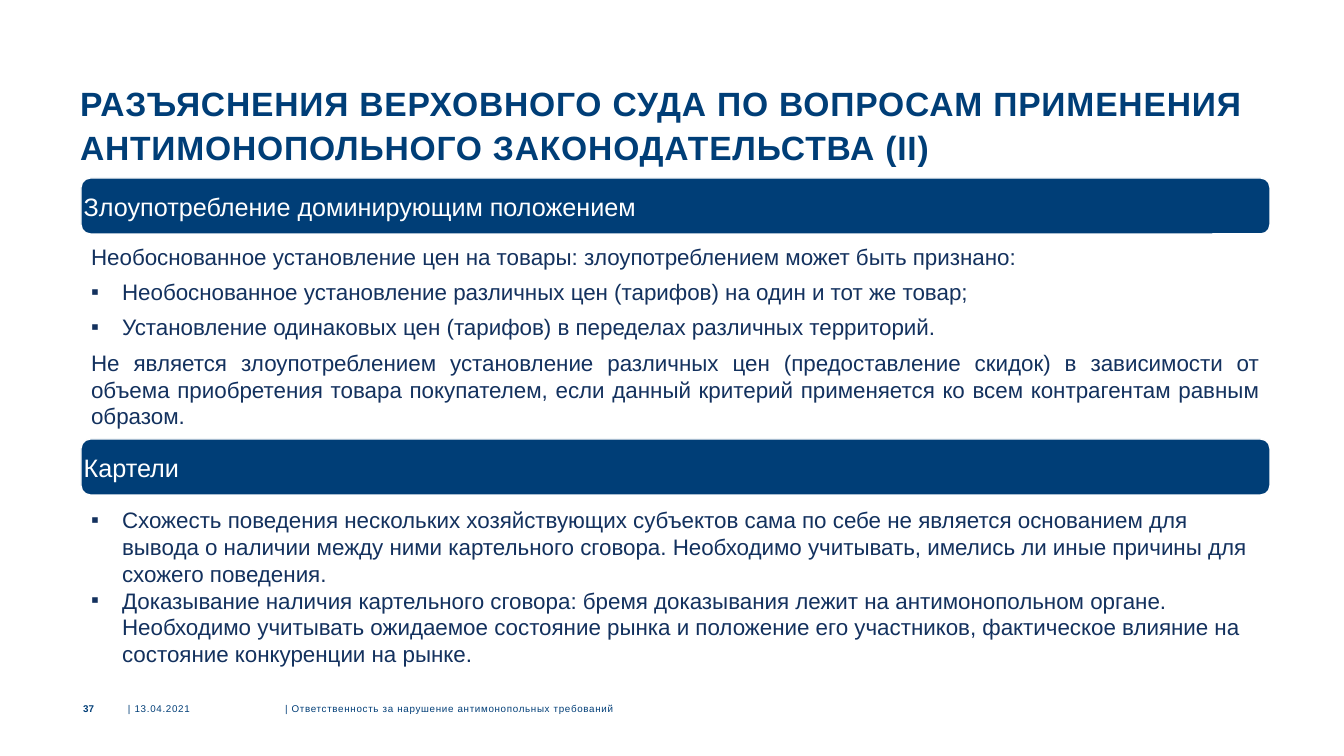
from lxml import etree
from pptx import Presentation
from pptx.dml.color import RGBColor
from pptx.enum.shapes import MSO_SHAPE
from pptx.enum.text import MSO_ANCHOR, MSO_AUTO_SIZE, PP_ALIGN
from pptx.oxml.ns import qn
from pptx.util import Emu, Pt

LEFT, RIGHT, JUSTIFY = PP_ALIGN.LEFT, PP_ALIGN.RIGHT, PP_ALIGN.JUSTIFY
TOP, MIDDLE = MSO_ANCHOR.TOP, MSO_ANCHOR.MIDDLE
NAVY, TEXT_BLUE, WHITE = "003E77", "13315E", "FFFFFF"
FONT = "Arial"

# Content
TITLE = ("РАЗЪЯСНЕНИЯ ВЕРХОВНОГО СУДА ПО ВОПРОСАМ ПРИМЕНЕНИЯ "
         "АНТИМОНОПОЛЬНОГО ЗАКОНОДАТЕЛЬСТВА (II)")
# Each section: heading, heading top, body top, body height, alignment,
# space between paragraphs (pt), paragraphs as (bulleted, text)
SECTIONS = [
    ("Злоупотребление доминирующим положением", 178, 238, 199, JUSTIFY, 6, [
        (False, "Необоснованное установление цен на товары: "
                "злоупотреблением может быть признано:"),
        (True, "Необоснованное установление различных цен (тарифов) "
               "на один и тот же товар;"),
        (True, "Установление одинаковых цен (тарифов) "
               "в переделах различных территорий."),
        (False, "Не является злоупотреблением установление различных цен "
                "(предоставление скидок) в зависимости от объема приобретения "
                "товара покупателем, если данный критерий применяется "
                "ко всем контрагентам равным образом."),
    ]),
    ("Картели", 439, 501, 173, LEFT, 0, [
        (True, "Схожесть поведения нескольких хозяйствующих субъектов "
               "сама по себе не является основанием для вывода о наличии "
               "между ними картельного сговора. Необходимо учитывать, "
               "имелись ли иные причины для схожего поведения."),
        (True, "Доказывание наличия картельного сговора: бремя доказывания "
               "лежит на антимонопольном органе. Необходимо учитывать "
               "ожидаемое состояние рынка и положение его участников, "
               "фактическое влияние на состояние конкуренции на рынке."),
    ]),
]
# Footer: text, left, width, alignment, bold, letter spacing (pt)
FOOTER = [
    ("37", 80, 14, RIGHT, True, 0),
    ("| 13.04.2021", 128, 154, LEFT, False, 0.5),
    ("| Ответственность за нарушение антимонопольных требований",
     285, 593, LEFT, False, 0.5),
]

# Layout in px
SLIDE_WIDTH, SLIDE_HEIGHT = 1344, 756
SECTION_LEFT, SECTION_WIDTH, HEADING_HEIGHT = 81, 1189, 56
FOOTER_TOP, FOOTER_HEIGHT = 701, 16
BULLET_INDENT = 31


def px(value):
    return Emu(round(value * 914400 / 100.8))


def color(value):
    return RGBColor.from_string(value)


def place(shape, left, top, width, height):
    shape.left, shape.top = px(left), px(top)
    shape.width, shape.height = px(width), px(height)


def set_frame(shape, anchor, inset=True):
    frame = shape.text_frame
    frame.word_wrap = True
    frame.auto_size = MSO_AUTO_SIZE.NONE
    frame.vertical_anchor = anchor
    if not inset:
        frame.margin_left = frame.margin_right = 0
        frame.margin_top = frame.margin_bottom = 0
    return frame


def add_run(paragraph, text, size, fill, bold=False, spacing=0):
    run = paragraph.add_run()
    run.text = text
    run.font.name = FONT
    run.font.size = Pt(size)
    run.font.bold = bold
    run.font.color.rgb = color(fill)
    if spacing:
        run.font._element.set("spc", str(round(spacing * 100)))


def set_bullet(paragraph, bulleted):
    properties = paragraph._p.get_or_add_pPr()
    indent = px(BULLET_INDENT) if bulleted else 0
    properties.set("marL", str(indent))
    properties.set("indent", str(-indent))
    if bulleted:
        etree.SubElement(properties, qn("a:buFont")).set("typeface", FONT)
        etree.SubElement(properties, qn("a:buChar")).set("char", "▪")
    else:
        etree.SubElement(properties, qn("a:buNone"))


presentation = Presentation()
presentation.slide_width, presentation.slide_height = px(SLIDE_WIDTH), px(SLIDE_HEIGHT)
# Two Content layout: a title and two bodies
slide = presentation.slides.add_slide(presentation.slide_layouts[3])
title, *bodies = slide.placeholders

# Title
place(title, 80, 80, 1185, 88)
paragraph = set_frame(title, TOP, inset=False).paragraphs[0]
paragraph.alignment = LEFT
paragraph.line_spacing = Pt(31)
add_run(paragraph, TITLE, 24, NAVY, bold=True, spacing=0.6)

# Sections: heading bar and body text
for body, section in zip(bodies, SECTIONS):
    heading, heading_top, body_top, body_height, alignment, gap, items = section
    bar = slide.shapes.add_shape(
        MSO_SHAPE.ROUNDED_RECTANGLE, px(SECTION_LEFT), px(heading_top),
        px(SECTION_WIDTH), px(HEADING_HEIGHT))
    bar.shadow.inherit = False
    bar.fill.solid()
    bar.fill.fore_color.rgb = color(NAVY)
    bar.line.color.rgb = color(WHITE)
    bar.line.width = Pt(1)
    paragraph = set_frame(bar, MIDDLE, inset=False).paragraphs[0]
    paragraph.alignment = JUSTIFY
    add_run(paragraph, heading, 18, WHITE)

    place(body, SECTION_LEFT, body_top, SECTION_WIDTH, body_height)
    frame = set_frame(body, TOP)
    for index, (bulleted, text) in enumerate(items):
        paragraph = frame.add_paragraph() if index else frame.paragraphs[0]
        set_bullet(paragraph, bulleted)
        paragraph.alignment = alignment
        paragraph.space_before = Pt(gap if index else 0)
        add_run(paragraph, text, 16, TEXT_BLUE)

# Footer
for text, left, width, alignment, bold, spacing in FOOTER:
    box = slide.shapes.add_textbox(px(left), px(FOOTER_TOP), px(width), px(FOOTER_HEIGHT))
    paragraph = set_frame(box, MIDDLE, inset=False).paragraphs[0]
    paragraph.alignment = alignment
    add_run(paragraph, text, 7, NAVY, bold, spacing)

presentation.save("out.pptx")
